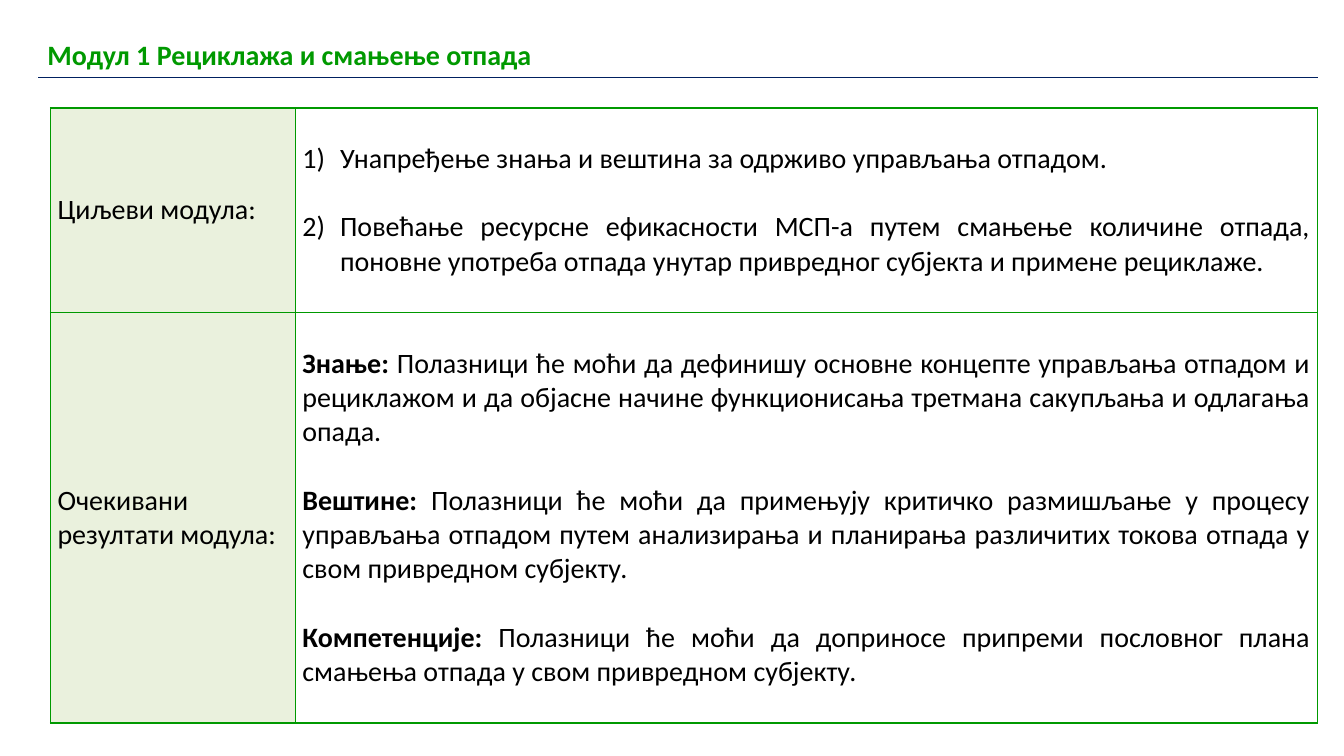
from lxml import etree
from pptx import Presentation
from pptx.dml.color import RGBColor
from pptx.enum.text import MSO_ANCHOR, PP_ALIGN
from pptx.oxml.ns import qn
from pptx.util import Cm, Pt

MIDDLE, TOP = MSO_ANCHOR.MIDDLE, MSO_ANCHOR.TOP
LEFT, JUSTIFY = PP_ALIGN.LEFT, PP_ALIGN.JUSTIFY
COLORS = {"green": "009900", "pale": "EAF1DD", "navy": "002060", "white": "FFFFFF", "black": "000000"}
TITLE = "Модул 1 Рециклажа и смањење отпада"
GOALS = [
    "Унапређење знања и вештина за одрживо управљања отпадом.",
    "Повећање ресурсне ефикасности МСП-а путем смањење количине отпада, "
    "поновне употреба отпада унутар привредног субјекта и примене рециклаже.",
]
RESULTS = [
    ("Знање:", " Полазници ће моћи да дефинишу основне концепте управљања отпадом и "
     "рециклажом и да објасне начине функционисања третмана сакупљања и одлагања опада."),
    ("Вештине:", " Полазници ће моћи да примењују критичко размишљање у процесу "
     "управљања отпадом путем анализирања и планирања различитих токова отпада у "
     "свом привредном субјекту."),
    ("Компетенције:", " Полазници ће моћи да доприносе припреми пословног плана "
     "смањења отпада у свом привредном субјекту."),
]


def add_grid(page, left, top, widths, heights):
    frame = page.shapes.add_table(len(heights), len(widths), Cm(left), Cm(top), Cm(sum(widths)), Cm(sum(heights)))
    table = frame.table
    table.first_row = table.horz_banding = False
    for column, width in zip(table.columns, widths):
        column.width = Cm(width)
    for row, height in zip(table.rows, heights):
        row.height = Cm(height)
    return table


def fill_cell(cell, paragraphs, borders, color="black", align=JUSTIFY, numbered=False):
    properties = cell._tc.get_or_add_tcPr()
    for side, border in zip("LRTB", borders):
        line = etree.SubElement(properties, qn("a:ln" + side), w=str(Pt(1)))
        solid = etree.SubElement(line, qn("a:solidFill"))
        etree.SubElement(solid, qn("a:srgbClr"), val=COLORS[border])
    cell.fill.background()
    for index, (lead, body) in enumerate(paragraphs):
        text_frame = cell.text_frame
        para = text_frame.add_paragraph() if index else text_frame.paragraphs[0]
        para.alignment = align
        if index:
            para.space_before = Pt(24.4)
        if numbered:
            layout = para._p.get_or_add_pPr()
            layout.set("marL", str(Cm(0.95)))
            layout.set("indent", str(Cm(-0.95)))
            etree.SubElement(layout, qn("a:buAutoNum"), type="arabicParenR")
        para.font.name = "Calibri"
        para.font.size = Pt(20)
        para.font.color.rgb = RGBColor.from_string(COLORS[color])
        for text, bold in ((lead, True), (body, False)):
            if text:
                span = para.add_run()
                span.text = text
                span.font.bold = bold


deck = Presentation()
deck.slide_width, deck.slide_height = Cm(33.87), Cm(19.05)
page = deck.slides.add_slide(deck.slide_layouts[6])

heading = add_grid(page, 0.94, 0.84, [32.28], [1.09])
fill_cell(heading.cell(0, 0), [(TITLE, "")], ["white", "white", "white", "navy"], "green", LEFT)
heading.cell(0, 0).vertical_anchor = TOP

module = add_grid(page, 1.27, 2.72, [6.17, 25.76], [5.16, 10.34])
rows = [
    ("Циљеви модула:", [("", goal) for goal in GOALS], True),
    ("Очекивани резултати модула:", RESULTS, False),
]
for index, (label, content, numbered) in enumerate(rows):
    label_cell, content_cell = module.cell(index, 0), module.cell(index, 1)
    fill_cell(label_cell, [("", label)], ["green"] * 4)
    fill_cell(content_cell, content, ["green"] * 4, numbered=numbered)
    label_cell.fill.solid()
    label_cell.fill.fore_color.rgb = RGBColor.from_string(COLORS["pale"])
    for cell in (label_cell, content_cell):
        cell.vertical_anchor = MIDDLE
        cell.margin_left = cell.margin_right = Cm(0.18)
        cell.margin_top = cell.margin_bottom = 0

deck.save("out.pptx")
